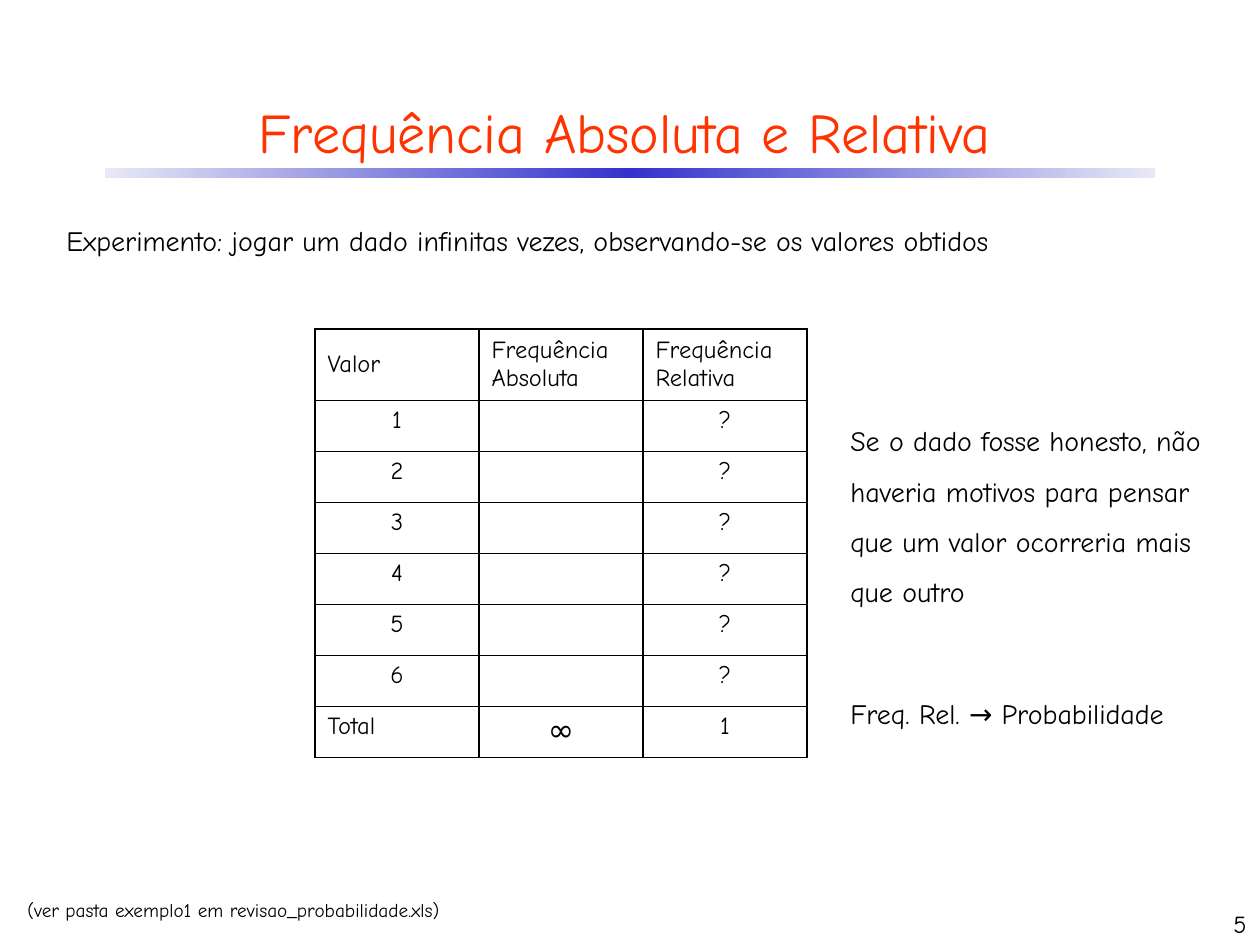
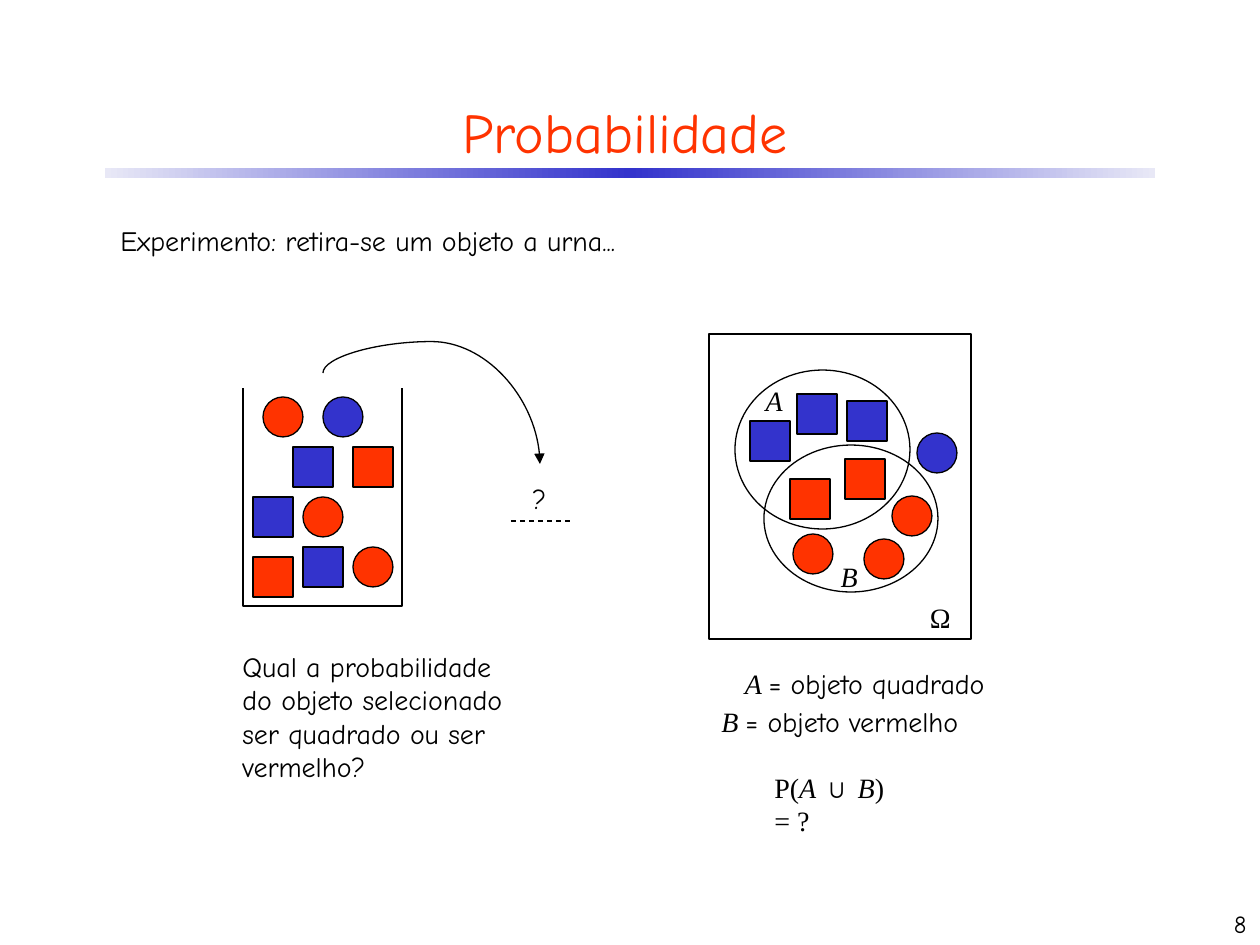
from copy import deepcopy

from lxml.etree import SubElement
from pptx import Presentation
from pptx.dml.color import RGBColor
from pptx.enum.dml import MSO_LINE
from pptx.enum.shapes import MSO_CONNECTOR as CONNECTOR, MSO_SHAPE as SHAPE
from pptx.enum.text import MSO_ANCHOR as ANCHOR, MSO_AUTO_SIZE as AUTO_SIZE, PP_ALIGN as ALIGN
from pptx.oxml.ns import qn
from pptx.util import Pt

PX = 914400 / 126
SANS, SERIF = "Comic Neue", "Times New Roman"
BLACK, WHITE, RED, BLUE, PALE = "000000", "FFFFFF", "FF3300", "3333CC", "E8E8F6"
OBJECT_SIZE = 40


def emu(*lengths):
    return [round(length * PX) for length in lengths]


def rgb(color):
    return RGBColor.from_string(color)


def write(frame, text, size=16, font=SANS, color=BLACK, italic=False,
          align=ALIGN.LEFT, spacing=None):
    """Fill the first paragraph; text is a string or a list of (string, overrides)."""
    paragraph = frame.paragraphs[0]
    paragraph.alignment = align
    if spacing:
        paragraph.line_spacing = spacing
    pieces = [(text, {})] if isinstance(text, str) else text
    for piece, overrides in pieces:
        look = {"size": size, "font": font, "italic": italic} | overrides
        for index, line in enumerate(piece.split("\n")):
            if index:
                paragraph.add_line_break()
            run = paragraph.add_run()
            run.text = line
            run.font.name = look["font"]
            run.font.size = Pt(look["size"])
            run.font.italic = look["italic"]
            run.font.color.rgb = rgb(color)


class Deck:
    def __init__(self):
        self.presentation = Presentation()
        self.presentation.slide_width, self.presentation.slide_height = emu(1260, 945)
        self.slide = None

    def new_slide(self, title, number):
        layout = self.presentation.slide_layouts[5]
        self.slide = self.presentation.slides.add_slide(layout)
        self.band()
        placeholder = self.slide.shapes.title
        (placeholder.left, placeholder.top,
         placeholder.width, placeholder.height) = emu(42, 84, 1166, 95)
        frame = placeholder.text_frame
        frame.auto_size = AUTO_SIZE.NONE
        frame.vertical_anchor = ANCHOR.MIDDLE
        write(frame, title, size=32, color=RED, align=ALIGN.CENTER)
        self.text(number, 997, 882, 262, 63, size=14, align=ALIGN.RIGHT, anchor=ANCHOR.BOTTOM)

    def band(self):
        shape = self.shape(SHAPE.RECTANGLE, 105, 168, 1050, 10)
        shape.line.fill.background()
        shape.fill.gradient()
        shape.fill.gradient_angle = 0
        stop_list = shape._element.spPr.find(".//" + qn("a:gsLst"))
        stop_list.append(deepcopy(stop_list[0]))
        for index, (stop, color) in enumerate(zip(shape.fill.gradient_stops, (PALE, BLUE, PALE))):
            stop.position = index / 2
            stop.color.rgb = rgb(color)

    def text(self, text, left, top, width, height, anchor=ANCHOR.TOP, **look):
        box = self.slide.shapes.add_textbox(*emu(left, top, width, height))
        frame = box.text_frame
        frame.word_wrap = True
        frame.vertical_anchor = anchor
        write(frame, text, **look)

    def outline(self, shape, fill=None):
        shape.shadow.inherit = False
        if fill:
            shape.fill.solid()
            shape.fill.fore_color.rgb = rgb(fill)
        else:
            shape.fill.background()
        shape.line.color.rgb = rgb(BLACK)
        shape.line.width = Pt(0.75)
        return shape

    def shape(self, kind, left, top, width, height, fill=None):
        shape = self.slide.shapes.add_shape(kind, *emu(left, top, width, height))
        return self.outline(shape, fill)

    def object(self, kind, color, left, top):
        self.shape(kind, left, top, OBJECT_SIZE, OBJECT_SIZE, color)

    def open_path(self, points):
        start, *rest = [emu(*point) for point in points]
        builder = self.slide.shapes.build_freeform(*start)
        builder.add_line_segments(rest, close=False)
        self.outline(builder.convert_to_shape())

    def connector(self, kind, *ends):
        connector = self.slide.shapes.add_connector(kind, *emu(*ends))
        connector.line.color.rgb = rgb(BLACK)
        connector.line.width = Pt(0.75)
        SubElement(connector._element.spPr, qn("a:effectLst"))
        return connector

    def dashed_line(self, *ends):
        self.connector(CONNECTOR.STRAIGHT, *ends).line.dash_style = MSO_LINE.DASH

    def arched_arrow(self, *ends, bend):
        """Curved arrow turned a quarter, so that it leaves upwards and lands downwards."""
        connector = self.connector(CONNECTOR.CURVE, *ends)
        properties = connector._element.spPr
        properties.find(qn("a:xfrm")).set("rot", "5400000")
        guides = properties.find(qn("a:prstGeom")).find(qn("a:avLst"))
        SubElement(guides, qn("a:gd"), name="adj1", fmla=f"val {bend}")
        SubElement(connector.line._get_or_add_ln(), qn("a:tailEnd"), type="triangle")

    def table(self, rows, left, top, column_width, heights):
        columns = len(rows[0])
        graphic = self.slide.shapes.add_table(
            len(rows), columns, *emu(left, top, column_width * columns, sum(heights)))
        table = graphic.table
        table.first_row = table.horz_banding = False
        for column in table.columns:
            column.width = emu(column_width)[0]
        for row, height in zip(table.rows, heights):
            row.height = emu(height)[0]
        for row_index, row in enumerate(rows):
            for column_index, value in enumerate(row):
                cell = table.cell(row_index, column_index)
                self.cell(cell, value, header=row_index == 0)

    def cell(self, cell, value, header):
        properties = cell._tc.get_or_add_tcPr()
        for side in ("a:lnL", "a:lnR", "a:lnT", "a:lnB"):
            border = SubElement(properties, qn(side), w=str(Pt(1)))
            fill = SubElement(border, qn("a:solidFill"))
            SubElement(fill, qn("a:srgbClr"), val=BLACK)
        cell.fill.solid()
        cell.fill.fore_color.rgb = rgb(WHITE)
        if header:
            cell.vertical_anchor = ANCHOR.MIDDLE
        if value:
            is_label = header or value == "Total"
            write(cell.text_frame, value, size=18 if value == "∞" else 14,
                  align=ALIGN.LEFT if is_label else ALIGN.CENTER)
        else:
            paragraph = cell.text_frame.paragraphs[0]
            paragraph._p.get_or_add_endParaRPr().set("sz", "1400")


def frequency_slide(deck):
    deck.new_slide("Frequência Absoluta e Relativa", "5")
    deck.text("Experimento: jogar um dado infinitas vezes, observando-se os valores obtidos",
              54, 217, 1152, 47)

    # Frequency table
    rows = [("Valor", "Frequência\nAbsoluta", "Frequência\nRelativa")]
    rows += [(str(face), "", "?") for face in range(1, 7)]
    rows.append(("Total", "∞", "1"))
    deck.table(rows, 315, 329, 164, [71] + [51] * 7)

    # Remarks
    deck.text("Se o dado fosse honesto, não haveria motivos para pensar que um valor "
              "ocorreria mais que outro", 838, 401, 377, 217, spacing=1.5)
    deck.text("Freq. Rel. → Probabilidade", 838, 674, 377, 63, spacing=1.5)
    deck.text("(ver pasta exemplo1 em revisao_probabilidade.xls)", 15, 892, 748, 37, size=11)


def probability_slide(deck):
    deck.new_slide("Probabilidade", "8")
    deck.text("Experimento: retira-se um objeto a urna...", 108, 217, 748, 47)
    square, circle = SHAPE.RECTANGLE, SHAPE.OVAL
    symbol = {"font": SERIF, "italic": True}
    upright = {"font": SERIF}

    # Urn, its objects on a 10 px grid
    left, right, rim, base = 243, 402, 388, 606
    deck.open_path([(left, rim), (left, base), (right, base), (right, rim)])
    urn_objects = [
        (circle, RED, 2, 1), (circle, BLUE, 8, 1), (circle, RED, 11, 16), (circle, RED, 6, 11),
        (square, RED, 1, 17), (square, RED, 11, 6), (square, BLUE, 5, 6),
        (square, BLUE, 1, 11), (square, BLUE, 6, 16),
    ]
    for kind, color, column, row in urn_objects:
        deck.object(kind, color, left + 10 * column, rim - 1 + 10 * row)

    # Drawn object
    deck.arched_arrow(386, 527, 477, 310, bend=-34600)
    deck.dashed_line(511, 521, 571, 521)
    deck.text("?", 520, 475, 41, 47)
    deck.text("Qual a probabilidade do objeto selecionado ser quadrado ou ser vermelho?",
              230, 643, 310, 147)

    # Sample space with events A and B
    deck.shape(square, 709, 334, 262, 305)
    venn_objects = [
        (circle, RED, 864, 539), (circle, BLUE, 917, 433), (circle, RED, 892, 496),
        (circle, RED, 793, 534), (square, RED, 790, 479), (square, RED, 845, 459),
        (square, BLUE, 847, 401), (square, BLUE, 750, 421), (square, BLUE, 797, 394),
    ]
    for venn_object in venn_objects:
        deck.object(*venn_object)
    deck.shape(circle, 735, 370, 175, 159)
    deck.shape(circle, 764, 445, 174, 147)
    deck.text("A", 752, 377, 43, 47, align=ALIGN.RIGHT, **symbol)
    deck.text("B", 827, 553, 43, 47, align=ALIGN.RIGHT, **symbol)
    deck.text("Ω", 916, 594, 47, 47, align=ALIGN.RIGHT, **upright)

    # Legend and question
    deck.text([("A ", symbol), ("= objeto quadrado", {})], 709, 660, 288, 47, align=ALIGN.RIGHT)
    deck.text([("B ", symbol), ("= objeto vermelho", {})], 709, 698, 286, 47)
    deck.text([("P(", {}), ("A ", symbol), ("∪ ", {}), ("B", symbol), (") = ?", {})],
              762, 764, 175, 47, **upright)


def main():
    deck = Deck()
    frequency_slide(deck)
    probability_slide(deck)
    deck.presentation.save("out.pptx")


if __name__ == "__main__":
    main()
